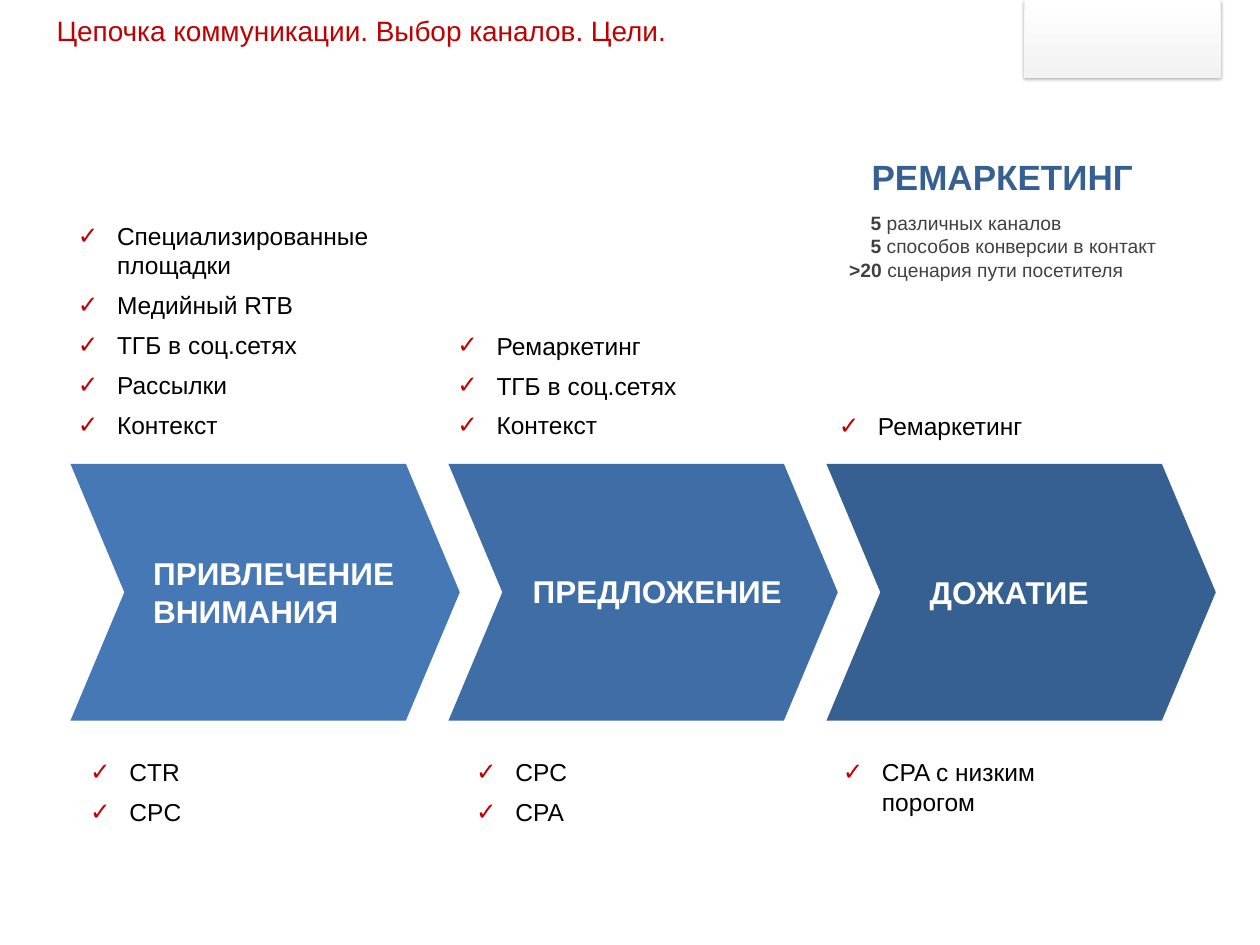
from lxml import etree
from pptx import Presentation
from pptx.dml.color import RGBColor
from pptx.enum.shapes import MSO_SHAPE
from pptx.enum.text import MSO_AUTO_SIZE
from pptx.oxml.ns import qn
from pptx.util import Cm, Pt

RECTANGLE, CHEVRON = MSO_SHAPE.RECTANGLE, MSO_SHAPE.CHEVRON
FIT_SHAPE = MSO_AUTO_SIZE.SHAPE_TO_FIT_TEXT

COLORS = {
    "red": "C00000", "black": "000000", "white": "FFFFFF",
    "pale": "F2F2F2", "grey": "404040", "attract": "4578B5",
    "offer": "3F6EA7", "close": "376092",
}
FORMATS = {
    "title": {"size": Pt(16)},
    "item": {"size": Pt(14)},
    "stage": {"size": Pt(18), "bold": True},
    "heading": {"size": Pt(20), "bold": True},
    "fact": {"size": Pt(11)},
}
STAGE_LEFT, STAGE_TOP, STAGE_PITCH = 1.42, 9.35, 7.62
STAGE_W, STAGE_H = 7.85, 5.18
CHANNELS_BOTTOM, GOALS_TOP = 9.03, 15.14

# colour, label, label box (left, top, width, height)
STAGES = [
    ("attract", "ПРИВЛЕЧЕНИЕ ВНИМАНИЯ", (2.84, 11.05, 5.84, 1.8)),
    ("offer", "ПРЕДЛОЖЕНИЕ", (10.49, 11.4, 5.82, 1.02)),
    ("close", "ДОЖАТИЕ", (18.49, 11.43, 5.41, 1.02)),
]
# left, width, height, items
CHANNELS = [
    (1.32, 7.7, 4.7, ["Специализированные площадки", "Медийный RTB",
                      "ТГБ в соц.сетях", "Рассылки", "Контекст"]),
    (8.97, 6.73, 2.49, ["Ремаркетинг", "ТГБ в соц.сетях", "Контекст"]),
    (16.66, 7.26, 0.86, ["Ремаркетинг"]),
]
GOALS = [
    (1.57, 6.35, 1.68, ["CTR", "CPC"]),
    (9.35, 6.35, 1.68, ["CPC", "CPA"]),
    (16.74, 6.35, 1.45, ["CPA c низким \vпорогом"]),
]
# indent, number, description
FACTS = [
    (0.43, "5", " различных каналов"),
    (0.43, "5", " способов конверсии в контакт"),
    (0, ">20", " сценария пути посетителя"),
]


def rgb(name):
    return RGBColor.from_string(COLORS[name])


def format_run(r, style, color, **extra):
    values = {"name": "Arial", **FORMATS[style], **extra}
    for key, value in values.items():
        setattr(r.font, key, value)
    r.font.color.rgb = rgb(color)


def add_text_frame(slide, box, wrap=True):
    tf = slide.shapes.add_textbox(*map(Cm, box)).text_frame
    tf.word_wrap = wrap
    tf.auto_size = FIT_SHAPE
    return tf


def add_paragraphs(tf, count):
    return [tf.paragraphs[0]] + [tf.add_paragraph() for _ in range(count - 1)]


def add_label(slide, text, box, style, color, wrap=True):
    p = add_text_frame(slide, box, wrap).paragraphs[0]
    p.text = text
    format_run(p.runs[0], style, color)


def add_check_bullet(p):
    pPr = p._p.get_or_add_pPr()
    pPr.set("marL", str(Cm(0.79)))
    pPr.set("indent", str(-Cm(0.79)))
    clr = etree.SubElement(pPr, qn("a:buClr"))
    etree.SubElement(clr, qn("a:srgbClr"), val=COLORS["red"])
    etree.SubElement(pPr, qn("a:buFont"), typeface="Arial")
    etree.SubElement(pPr, qn("a:buChar"), char="✓")


def add_checklist(slide, box, items):
    tf = add_text_frame(slide, box)
    for p, item in zip(add_paragraphs(tf, len(items)), items):
        p.text = item
        add_check_bullet(p)
        p.space_after = Pt(6)
        for r in p.runs:
            format_run(r, "item", "black")


def add_facts(slide, box):
    tf = add_text_frame(slide, box)
    for p, (indent, number, text) in zip(add_paragraphs(tf, len(FACTS)), FACTS):
        p._p.get_or_add_pPr().set("marL", str(Cm(indent)))
        for part, bold in ((number, True), (text, False)):
            r = p.add_run()
            r.text = part
            format_run(r, "fact", "grey", bold=bold)


def add_plain_shape(slide, kind, box):
    sp = slide.shapes.add_shape(kind, *map(Cm, box))
    sp.shadow.inherit = False
    sp.line.fill.background()
    return sp


def add_corner_plate(slide):
    """Pale gradient plate with a soft shadow below it."""
    sp = add_plain_shape(slide, RECTANGLE, (20.65, 0, 3.96, 1.57))
    sp.fill.gradient()
    sp.fill.gradient_angle = 270
    for stop, color in zip(sp.fill.gradient_stops, ("white", "pale")):
        stop.color.rgb = rgb(color)
    effects = sp._element.spPr.find(qn("a:effectLst"))
    shadow = etree.SubElement(effects, qn("a:outerShdw"), blurRad=str(Pt(2)),
                              dist=str(Pt(1)), dir="5400000", rotWithShape="0")
    clr = etree.SubElement(shadow, qn("a:srgbClr"), val=COLORS["black"])
    etree.SubElement(clr, qn("a:alpha"), val="30000")


def add_stages(slide):
    for i, (color, label, box) in enumerate(STAGES):
        left = STAGE_LEFT + i * STAGE_PITCH
        sp = add_plain_shape(slide, CHEVRON, (left, STAGE_TOP, STAGE_W, STAGE_H))
        sp.adjustments[0] = 0.21
        sp.fill.solid()
        sp.fill.fore_color.rgb = rgb(color)
        add_label(slide, label, box, "stage", "white")


def main():
    prs = Presentation()
    prs.slide_width, prs.slide_height = Cm(25.4), Cm(19.05)
    slide = prs.slides.add_slide(prs.slide_layouts[6])

    add_corner_plate(slide)
    add_label(slide, "Цепочка коммуникации. Выбор каналов. Цели.",
              (0.89, 0.15, 12.98, 0.94), "title", "red", wrap=False)
    for left, width, height, items in CHANNELS:
        add_checklist(slide, (left, CHANNELS_BOTTOM - height, width, height), items)
    for left, width, height, items in GOALS:
        add_checklist(slide, (left, GOALS_TOP, width, height), items)
    add_stages(slide)
    add_label(slide, "РЕМАРКЕТИНГ", (17.32, 3.02, 7.98, 1.12), "heading", "close")
    add_facts(slide, (16.87, 4.14, 7.32, 2.13))

    prs.save("out.pptx")


if __name__ == "__main__":
    main()
